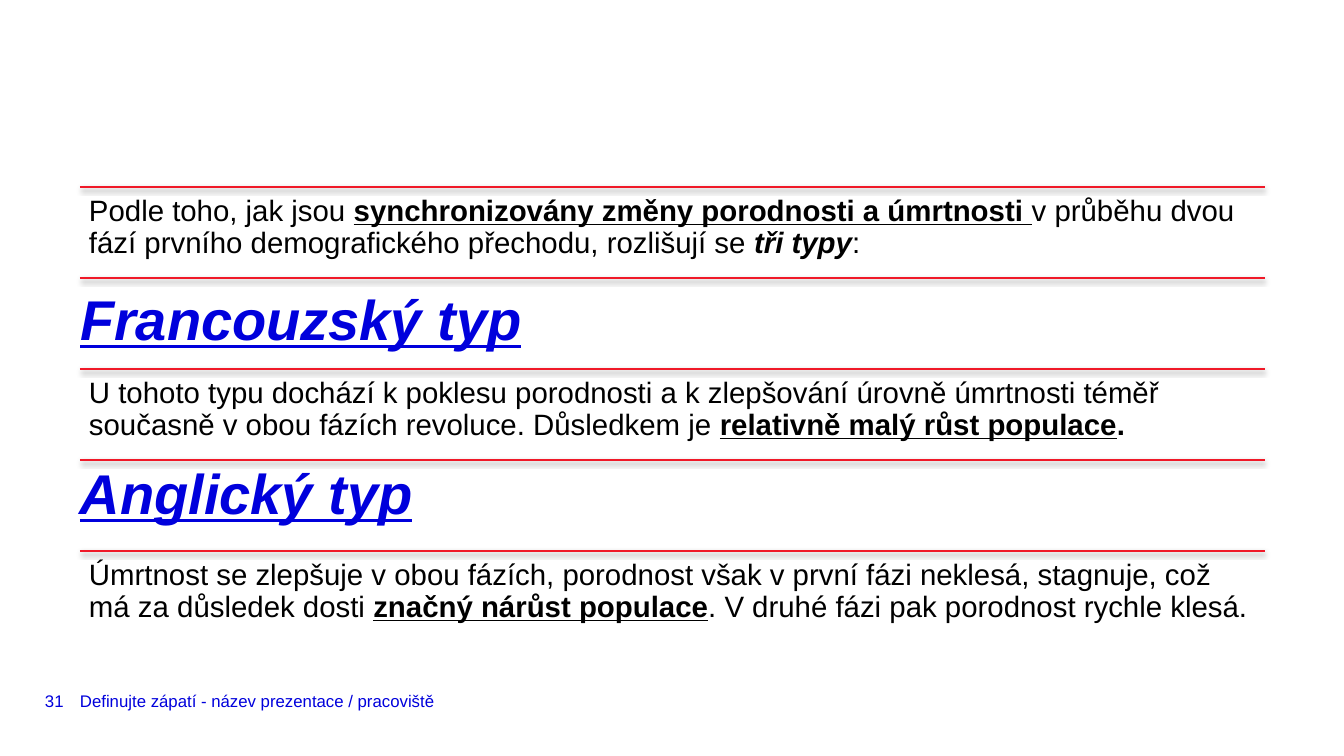
from lxml.etree import SubElement
from pptx import Presentation
from pptx.dml.color import RGBColor
from pptx.enum.shapes import MSO_CONNECTOR
from pptx.enum.text import MSO_ANCHOR, MSO_AUTO_SIZE, PP_ALIGN
from pptx.oxml.ns import qn
from pptx.util import Emu, Pt

BLUE, RED, BLACK = "0000DC", "F01928", "000000"
FONT = "Arial"

# Runs are (text, styles): b bold, i italic, u underlined
INTRO = [
    ("Podle toho, jak jsou ", ""),
    ("synchronizovány změny porodnosti a úmrtnosti ", "bu"),
    ("v průběhu dvou fází prvního demografického přechodu, rozlišují se ", ""),
    ("tři typy", "bi"),
    (":", ""),
]
FRENCH = [
    ("U tohoto typu dochází k poklesu porodnosti a k zlepšování úrovně úmrtnosti "
     "téměř současně v obou fázích revoluce. Důsledkem je ", ""),
    ("relativně malý růst populace", "bu"),
    (".", "b"),
]
ENGLISH = [
    ("Úmrtnost se zlepšuje v obou fázích, porodnost však v první fázi neklesá, "
     "stagnuje, což má za důsledek dosti ", ""),
    ("značný nárůst populace", "bu"),
    (". V druhé fázi pak porodnost rychle klesá.", ""),
]
ROW_TEXTS = {0: INTRO, 2: FRENCH, 4: ENGLISH}
FRENCH_HEADING = "Francouzský typ"
ENGLISH_HEADING = "Anglický typ"
FOOTER = "Definujte zápatí - název prezentace / pracoviště"
PAGE_NUMBER = "31"

# Lengths in px
SLIDE_W, SLIDE_H = 1344, 756
LEFT, WIDTH = 80, 1185
FIRST_RULE, ROW_PITCH, RULE_COUNT = 187, 91, 5
HEADING_H, FOOTER_TOP, FOOTER_H = 49, 687, 28


def px(length):
    return Emu(round(length * 914400 / 100.8))


def rgb(hex_colour):
    return RGBColor.from_string(hex_colour)


def fill_text(box, runs, size, colour, inset=0, anchor=MSO_ANCHOR.TOP, spacing=None):
    frame = box.text_frame
    frame.auto_size = MSO_AUTO_SIZE.NONE
    frame.word_wrap = True
    frame.vertical_anchor = anchor
    frame.margin_left = frame.margin_right = px(inset)
    frame.margin_top = frame.margin_bottom = px(inset)
    paragraph = frame.paragraphs[0]
    paragraph.alignment = PP_ALIGN.LEFT
    paragraph.line_spacing = spacing
    for text, styles in runs:
        run = paragraph.add_run()
        run.text = text
        font = run.font
        font.name, font.size = FONT, Pt(size)
        font.color.rgb = rgb(colour)
        font.bold, font.italic, font.underline = (s in styles for s in "biu")


def add_text(left, top, width, height, runs, size, colour, **layout):
    box = slide.shapes.add_textbox(px(left), px(top), px(width), px(height))
    fill_text(box, runs, size, colour, **layout)


def add_rule(y):
    """Draw a red horizontal line with a soft shadow below it."""
    rule = slide.shapes.add_connector(
        MSO_CONNECTOR.STRAIGHT, px(LEFT), px(y), px(LEFT + WIDTH), px(y))
    rule.line.color.rgb = rgb(RED)
    rule.line.width = Pt(2)
    effects = SubElement(rule._element.spPr, qn("a:effectLst"))
    shadow = SubElement(effects, qn("a:outerShdw"), blurRad="40000",
                        dist="20000", dir="5400000", rotWithShape="0")
    shade = SubElement(shadow, qn("a:srgbClr"), val=BLACK)
    SubElement(shade, qn("a:alpha"), val="38000")


prs = Presentation()
prs.slide_width, prs.slide_height = px(SLIDE_W), px(SLIDE_H)
slide = prs.slides.add_slide(prs.slide_layouts[5])

for left, width, text in ((LEFT, 873, FOOTER), (45, 28, PAGE_NUMBER)):
    add_text(left, FOOTER_TOP, width, FOOTER_H, [(text, "")], 12, BLUE,
             anchor=MSO_ANCHOR.MIDDLE)

title = slide.shapes.title
title.left, title.top, title.width, title.height = map(px, (LEFT, 296, WIDTH, HEADING_H))
fill_text(title, [(FRENCH_HEADING, "biu")], 40, BLUE, spacing=Pt(40))

for row in range(RULE_COUNT):
    y = FIRST_RULE + row * ROW_PITCH
    add_rule(y)
    if row in ROW_TEXTS:
        add_text(LEFT, y, WIDTH, ROW_PITCH, ROW_TEXTS[row], 21, BLACK,
                 inset=9, spacing=0.9)

add_text(LEFT, 470, WIDTH, HEADING_H, [(ENGLISH_HEADING, "biu")], 40, BLUE,
         spacing=Pt(40))

prs.save("out.pptx")
